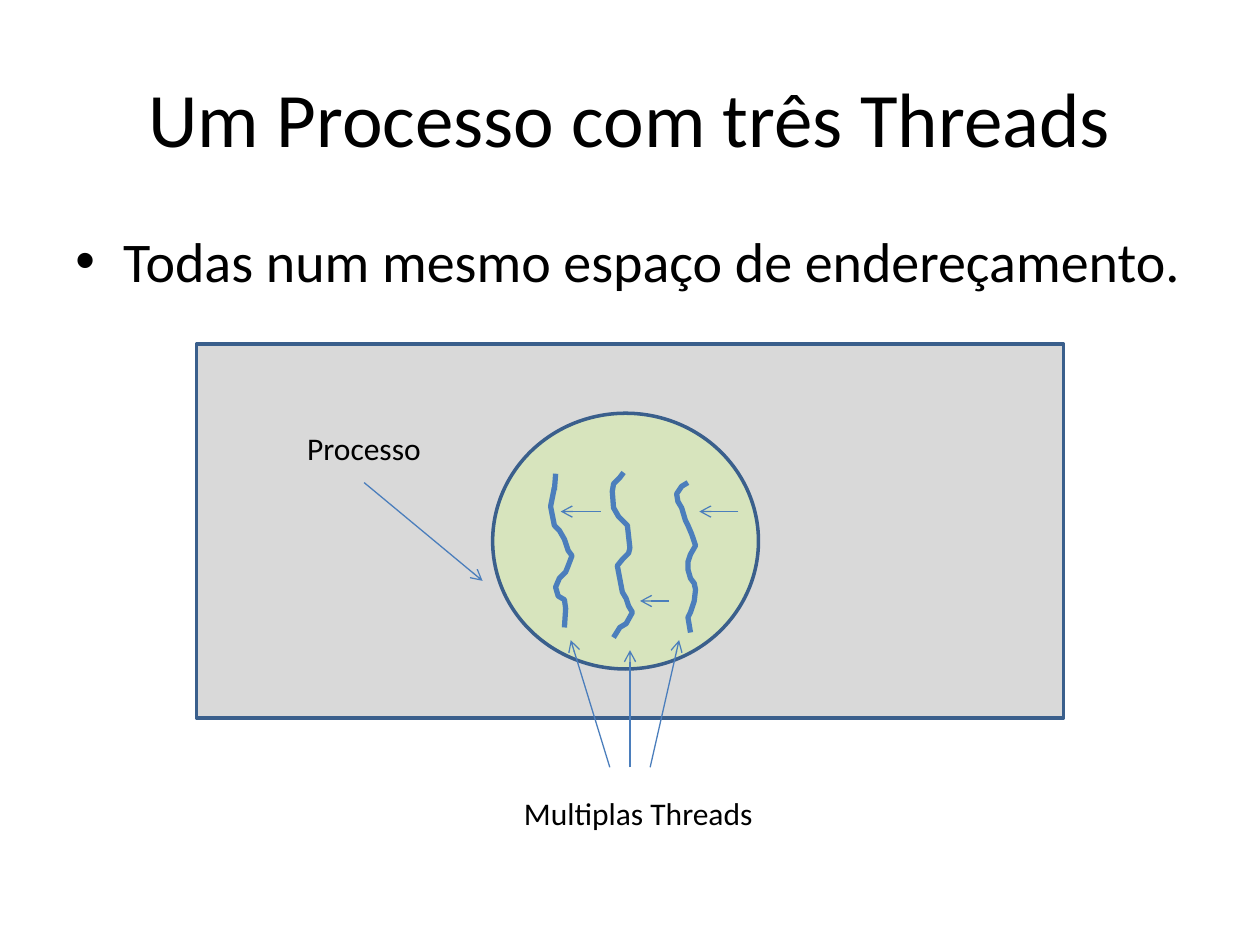
"""Build a slide showing one process with three threads in one address space."""
from lxml import etree
from pptx import Presentation
from pptx.dml.color import RGBColor
from pptx.enum.shapes import MSO_CONNECTOR, MSO_SHAPE
from pptx.enum.text import MSO_ANCHOR, MSO_AUTO_SIZE, PP_ALIGN
from pptx.oxml.ns import qn
from pptx.util import Inches, Pt

BLACK = RGBColor(0x00, 0x00, 0x00)
GRAY = RGBColor(0xD9, 0xD9, 0xD9)
GREEN = RGBColor(0xD7, 0xE4, 0xBD)
OUTLINE_BLUE = RGBColor(0x3A, 0x5F, 0x8C)
THREAD_BLUE = RGBColor(0x4B, 0x7E, 0xBC)
FONT = "Calibri"
RECTANGLE = MSO_SHAPE.RECTANGLE
OVAL = MSO_SHAPE.OVAL
STRAIGHT = MSO_CONNECTOR.STRAIGHT
TOP = MSO_ANCHOR.TOP
MIDDLE = MSO_ANCHOR.MIDDLE
LEFT = PP_ALIGN.LEFT
CENTER = PP_ALIGN.CENTER
GROW = MSO_AUTO_SIZE.SHAPE_TO_FIT_TEXT
FIXED = MSO_AUTO_SIZE.NONE

THREADS = [
    [(4.95, 3.75), (4.92, 3.79), (4.87, 3.84), (4.86, 3.9), (4.87, 4.03),
     (4.91, 4.1), (4.98, 4.17), (5, 4.35), (4.99, 4.39), (4.94, 4.44),
     (4.9, 4.49), (4.94, 4.7), (4.97, 4.75), (4.99, 4.81), (5.02, 4.86),
     (4.97, 4.95), (4.92, 4.98), (4.87, 5.06)],
    [(5.46, 3.83), (5.41, 3.86), (5.37, 3.92), (5.38, 3.98), (5.41, 4.03),
     (5.44, 4.13), (5.46, 4.17), (5.49, 4.24), (5.52, 4.33), (5.48, 4.4),
     (5.46, 4.46), (5.46, 4.52), (5.48, 4.59), (5.51, 4.63), (5.52, 4.68),
     (5.51, 4.77), (5.48, 4.86), (5.46, 4.9), (5.48, 5.02)],
    [(4.4, 3.87), (4.37, 4.02), (4.4, 4.17), (4.44, 4.21), (4.48, 4.28),
     (4.51, 4.37), (4.54, 4.41), (4.51, 4.49), (4.49, 4.54), (4.44, 4.59),
     (4.41, 4.66), (4.43, 4.73), (4.48, 4.76), (4.49, 4.83), (4.48, 4.98)],
    [(4.4, 3.89), (4.41, 3.76)],
]
ARROWS = [
    ((5.86, 4.06), (5.55, 4.06)),
    ((5.31, 4.77), (5.08, 4.77)),
    ((4.77, 4.06), (4.45, 4.06)),
    ((2.89, 3.83), (3.83, 4.61)),
    ((5, 6.09), (5, 5.16)),
    ((5.16, 6.09), (5.39, 5.08)),
    ((4.84, 6.09), (4.53, 5.08)),
]


def add_text(slide, box, wording, size, align=LEFT, anchor=TOP, fit=FIXED):
    """Add a wrapped text box and return its paragraph."""
    frame = slide.shapes.add_textbox(*map(Inches, box)).text_frame
    frame.word_wrap = True
    frame.auto_size = fit
    frame.vertical_anchor = anchor
    paragraph = frame.paragraphs[0]
    paragraph.alignment = align
    run = paragraph.add_run()
    run.text = wording
    run.font.name = FONT
    run.font.size = Pt(size)
    run.font.color.rgb = BLACK
    return paragraph


def add_bullet(paragraph):
    """Give a paragraph a hanging bullet."""
    properties = paragraph._p.get_or_add_pPr()
    properties.set("marL", str(Inches(0.38)))
    properties.set("indent", str(-Inches(0.38)))
    etree.SubElement(properties, qn("a:buFont"), typeface="Arial")
    etree.SubElement(properties, qn("a:buChar"), char="•")


def add_region(slide, kind, box, fill):
    """Add a filled region with a dark blue outline."""
    region = slide.shapes.add_shape(kind, *map(Inches, box))
    region.shadow.inherit = False
    region.fill.solid()
    region.fill.fore_color.rgb = fill
    region.line.color.rgb = OUTLINE_BLUE
    region.line.width = Pt(2)


def add_thread(slide, points):
    """Draw a thread as an open wavy outline."""
    start, *rest = [(Inches(x), Inches(y)) for x, y in points]
    builder = slide.shapes.build_freeform(*start)
    builder.add_line_segments(rest, close=False)
    thread = builder.convert_to_shape()
    thread.shadow.inherit = False
    thread.fill.background()
    thread.line.color.rgb = THREAD_BLUE
    thread.line.width = Pt(3)


def add_arrow(slide, start, end):
    """Draw a thin arrow with an open head at its end."""
    arrow = slide.shapes.add_connector(STRAIGHT, *map(Inches, start + end))
    arrow.line.color.rgb = THREAD_BLUE
    arrow.line.width = Pt(0.75)
    etree.SubElement(arrow.line._get_or_add_ln(), qn("a:tailEnd"), type="arrow")
    etree.SubElement(arrow._element.spPr, qn("a:effectLst"))


def main():
    """Build and save the slide."""
    deck = Presentation()
    deck.slide_width, deck.slide_height = Inches(10), Inches(7.5)
    slide = deck.slides.add_slide(deck.slide_layouts[6])

    add_text(slide, (0.5, 0.3, 9, 1.25), "Um Processo com três Threads", 44,
             CENTER, MIDDLE)
    statement = add_text(slide, (0.5, 1.75, 9, 4.95),
                         "Todas num mesmo espaço de endereçamento.", 32)
    statement.space_before = Pt(6.4)
    add_bullet(statement)

    add_region(slide, RECTANGLE, (1.56, 2.73, 6.88, 2.97), GRAY)
    add_region(slide, OVAL, (3.91, 3.28, 2.11, 2.03), GREEN)
    for points in THREADS:
        add_thread(slide, points)
    add_text(slide, (4.06, 6.25, 2.11, 0.4), "Multiplas Threads", 18, fit=GROW)
    add_text(slide, (2.34, 3.36, 1.33, 0.4), "Processo", 18, fit=GROW)
    for start, end in ARROWS:
        add_arrow(slide, start, end)

    deck.save("out.pptx")


if __name__ == "__main__":
    main()
